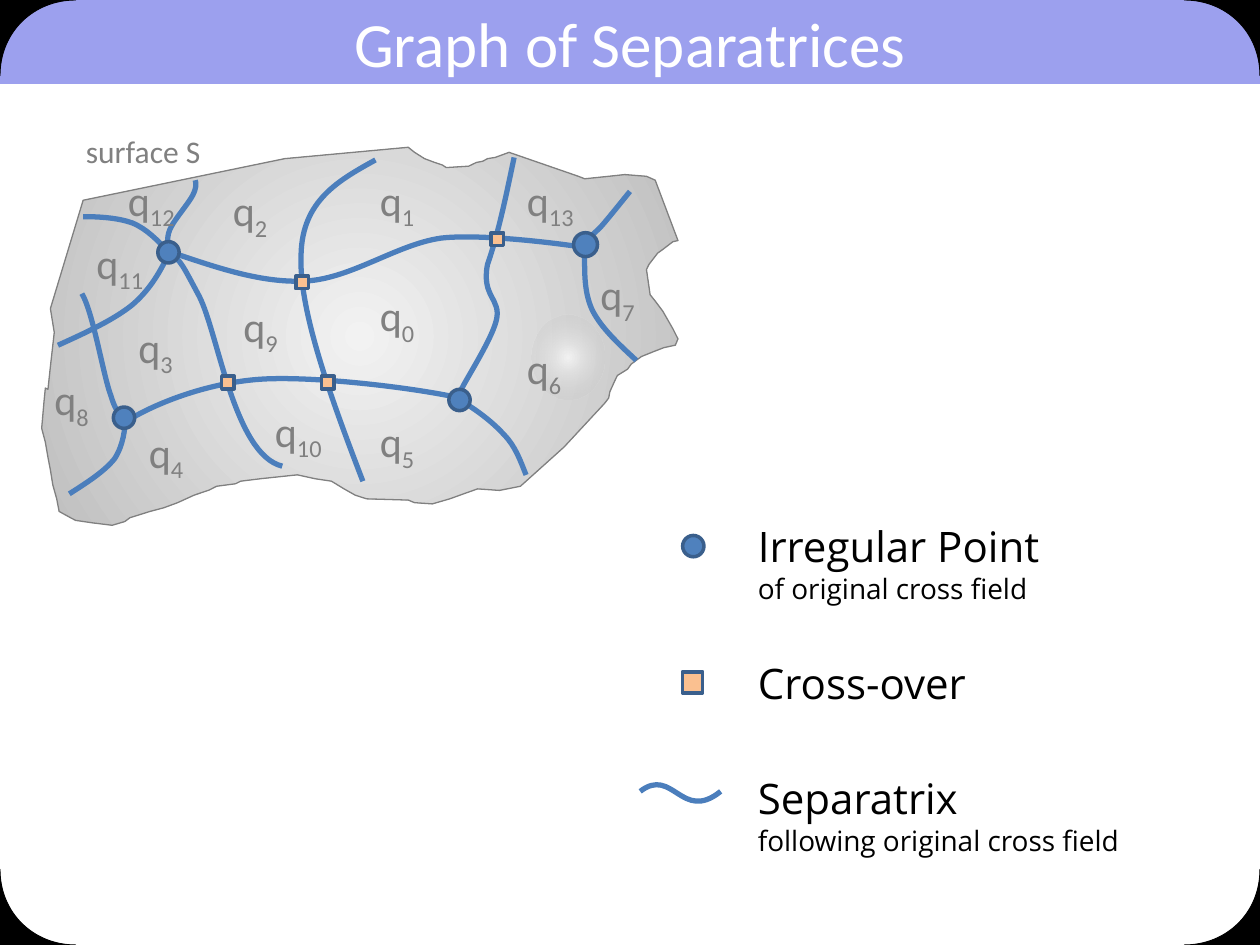
from lxml.etree import SubElement
from pptx import Presentation
from pptx.dml.color import RGBColor
from pptx.enum.shapes import MSO_SHAPE
from pptx.enum.text import MSO_ANCHOR, MSO_AUTO_SIZE, PP_ALIGN
from pptx.oxml.ns import qn
from pptx.util import Pt

WIDTH, HEIGHT = 720, 540
BAND = RGBColor(0x9C, 0xA0, 0xEE)
WHITE = RGBColor(0xFF, 0xFF, 0xFF)
BLACK = RGBColor(0, 0, 0)
GRAY = RGBColor(0x80, 0x80, 0x80)
SURFACE_LIGHT = RGBColor(0xF2, 0xF2, 0xF2)
SURFACE_DARK = RGBColor(0xBF, 0xBF, 0xBF)
CURVE = RGBColor(0x4B, 0x7E, 0xBC)
POINT = RGBColor(0x4F, 0x81, 0xBD)
CROSSOVER = RGBColor(0xFA, 0xC0, 0x90)
MARKER_EDGE = RGBColor(0x3A, 0x5F, 0x8C)

SURFACE = [
    (28.8, 209.5), (31, 190), (28.8, 176.4), (47.5, 114.5), (162.7, 90.7),
    (233.3, 84.2), (236.9, 87.1), (242.6, 90.7), (248.4, 92.9), (252.7, 94.3),
    (255, 95.8), (267.8, 95), (272.2, 92.9), (275.8, 92.2), (278.6, 90.7),
    (283, 90), (290.9, 87.1), (330.5, 100.8), (334.1, 102.2), (347.8, 100.8),
    (357, 99.8), (369.4, 100.8), (374.4, 103), (387.4, 137.5), (384.5, 138.2),
    (378.7, 142.6), (375.8, 144.7), (370.8, 151.2), (369.4, 154.1), (371.5, 168.5),
    (374.4, 172.1), (378.7, 177.8), (384.5, 187.9), (387.4, 193.7), (385.9, 197.3),
    (379.4, 198.7), (373.7, 200.9), (366.5, 203.8), (360.7, 208.1), (358.6, 211),
    (352.8, 214.6), (351.4, 217.4), (348.5, 223.9), (347.8, 227.5), (345.6, 230.4),
    (322.3, 255.5), (297.4, 277.9), (285.4, 280.3), (272.9, 279.4), (265, 282.2),
    (257, 285.1), (247, 288), (236.9, 287.3), (233.3, 285.8), (209.5, 285.1),
    (203, 283), (196.6, 279.4), (189.4, 275), (180, 273.6), (169.9, 271.4),
    (149, 273.6), (137.5, 275), (134.6, 276.5), (123.8, 277.9), (119.5, 280.1),
    (110.9, 283), (101.5, 287.3), (93.6, 290.2), (85.7, 292.3), (74.2, 295.9),
    (71.3, 298.1), (64.1, 300.2), (52.6, 298.8), (43.2, 297.4), (40.3, 295.9),
    (33.8, 292.3), (32.4, 285.1), (30.2, 277.2), (28.8, 268.6), (27.4, 261.4),
    (25.9, 252.7), (23.8, 244.8), (25.2, 229), (25.9, 221.8), (27.4, 222.5),
]

# Each separatrix: a start, then two control points and an end per cubic piece
SEPARATRICES = [
    [(96.5, 144), (95.8, 139.7), (95, 134.6), (97.9, 129.6), (100, 125.3),
     (108, 115.9), (110.2, 111.6), (112.3, 107.3), (112.3, 105.1), (111.6, 103)],
    [(97.2, 144), (104.4, 151.2), (103, 149), (113.8, 169.2),
     (124.6, 190.1), (133.9, 259.9), (161.3, 266.4)],
    [(72.7, 240.5), (86.4, 231.8), (116.6, 218.9), (149, 216.7),
     (181.4, 214.6), (243.4, 222.5), (265.7, 228.2)],
    [(97.2, 144), (123.1, 152.6), (149, 162), (175, 160.6), (200.9, 159.1),
     (226.8, 139.7), (252, 136.1), (277.2, 133.2), (326.9, 140.4), (326.9, 140.4)],
    [(96.5, 144), (90, 137.5), (84.2, 131), (75.6, 127.4),
     (67.7, 124.6), (57.6, 123.8), (47.5, 123.8)],
    [(97.2, 143.3), (92.2, 154.1), (86.4, 164.9), (75.6, 174.2),
     (64.8, 182.9), (49, 190.1), (33.1, 197.3)],
    [(69.8, 239.8), (70.6, 237.6), (67, 238.3), (63.4, 226.1),
     (59, 214.6), (53.3, 178.6), (46.8, 167.8)],
    [(214.6, 91.4), (193.7, 103), (172.8, 114.5), (172.1, 145.4),
     (170.6, 176.4), (188.6, 226.1), (207.4, 275)],
    [(262.8, 224.6), (263.5, 221), (280.8, 195.1), (283.7, 182.9), (286.6, 170.6),
     (275, 169.9), (278.6, 151.2), (285.1, 132.5), (289.4, 110.9), (293.8, 90)],
    [(72, 237.6), (71.3, 245.5), (70.6, 254.2), (65.5, 262.1),
     (59.8, 269.3), (49.7, 275.8), (39.6, 282.2)],
    [(263.5, 229), (272.9, 234.7), (281.5, 241.2), (288, 248.4),
     (294.5, 254.9), (297.4, 263.5), (300.6, 271.4)],
    [(335.5, 136.8), (337, 135.4), (339.1, 133.9), (343.4, 129.6),
     (347.8, 124.6), (353.5, 117.4), (360, 109.4)],
    [(334.1, 142.6), (334.1, 154.1), (333.4, 166.3), (338.4, 177.1),
     (343.4, 187.2), (353.5, 196.6), (363.6, 205.9)],
]
LEGEND_WAVE = [(365.8, 452.2), (384.5, 437.8), (389.5, 470.2), (411.8, 452.2)]

# Top-left corner piece; the other three are its reflections
CORNER = [(-1, -1.4), (-1, 13), (-1.4, 34.6), (0, 43.2), (0, 18), (19.4, 0),
          (43.2, 0), (33.8, -1.4), (13, -1.4), (-1, -1.4)]

IRREGULAR_POINTS = [(96.3, 144.2, 12.2), (70.9, 238.7, 12.2),
                    (262.6, 228.6, 12.2), (334.6, 139.8, 13.7)]
CROSSOVERS = [(130.3, 218.6), (172.7, 161.4), (187.4, 218.6), (284.3, 136.7)]

# Patch index -> left and top of its label
PATCH_LABELS = {
    0: (210, 162), 3: (72, 180), 9: (132, 168), 2: (126, 102), 11: (48, 132),
    8: (24, 210), 4: (78, 240), 10: (150, 228), 6: (294, 192), 5: (210, 234),
    1: (210, 96), 13: (294, 96), 7: (336, 150), 12: (66, 96),
}
LEGEND_TEXTS = [
    (294, 198, 55, ["Irregular Point", "of original cross field"]),
    (372, 192, 36, ["Cross-over"]),
    (438, 228, 55, ["Separatrix", "following original cross field"]),
]


class Painter:
    heading_font, legend_font = "Calibri", "Open Sans"

    def __init__(self, slide):
        self.slide = slide
        self.shapes = slide.shapes

    def start_group(self):
        self.shapes = self.slide.shapes.add_group_shape().shapes

    def end_group(self):
        self.shapes = self.slide.shapes

    def title(self, text, height):
        title = self.slide.shapes.title
        title.left, title.top, title.width, title.height = 0, 0, Pt(WIDTH), Pt(height)
        title.text_frame.vertical_anchor = MSO_ANCHOR.MIDDLE
        title.text_frame.text = text
        paragraph = title.text_frame.paragraphs[0]
        paragraph.alignment = PP_ALIGN.CENTER
        self.font(paragraph, self.heading_font, 36, WHITE)
        # Bring the title in front of the band and corners
        title._element.getparent().append(title._element)

    def font(self, paragraph, name, size, color):
        paragraph.font.name, paragraph.font.size = name, Pt(size)
        paragraph.font.color.rgb = color

    def paint(self, shape, fill, edge, weight):
        shape.shadow.inherit = False
        if fill is None:
            shape.fill.background()
        else:
            shape.fill.solid()
            shape.fill.fore_color.rgb = fill
        if edge is None:
            shape.line.fill.background()
        else:
            shape.line.color.rgb, shape.line.width = edge, Pt(weight)
        return shape

    def outline(self, points, fill=None, edge=None, weight=1, close=True):
        start, *rest = [(Pt(x), Pt(y)) for x, y in points]
        builder = self.shapes.build_freeform(*start)
        builder.add_line_segments(rest, close=close)
        return self.paint(builder.convert_to_shape(), fill, edge, weight)

    def curve(self, knots, fill=None, edge=CURVE, weight=3, close=False):
        shape = self.outline(knots, fill, edge, weight, close)
        # Join each three line steps into one cubic piece
        lines = list(shape._element.iter(qn("a:lnTo")))
        for i in range(0, len(lines), 3):
            cubic = lines[i].makeelement(qn("a:cubicBezTo"))
            lines[i].addprevious(cubic)
            for line in lines[i:i + 3]:
                cubic.append(line[0])
                line.getparent().remove(line)

    def marker(self, kind, x, y, width, height, fill, edge=MARKER_EDGE):
        shape = self.shapes.add_shape(kind, Pt(x - width / 2), Pt(y - height / 2),
                                      Pt(width), Pt(height))
        return self.paint(shape, fill, edge, 2)

    def radial_gradient(self, shape, fade=False):
        shape.fill.gradient()
        for stop, color in zip(shape.fill.gradient_stops, (SURFACE_LIGHT, SURFACE_DARK)):
            stop.color.rgb = color
        gradient = shape._element.spPr.find(qn("a:gradFill"))
        gradient.remove(gradient.find(qn("a:lin")))
        circle = SubElement(gradient, qn("a:path"), path="circle")
        SubElement(circle, qn("a:fillToRect"), dict.fromkeys("ltrb", "50000"))
        if fade:
            last_color = gradient.findall(".//" + qn("a:srgbClr"))[-1]
            SubElement(last_color, qn("a:alpha"), val="0")

    def text_frame(self, x, y, width, height, wrap):
        frame = self.shapes.add_textbox(Pt(x), Pt(y), Pt(width), Pt(height)).text_frame
        frame.word_wrap = wrap
        frame.auto_size = MSO_AUTO_SIZE.SHAPE_TO_FIT_TEXT
        return frame

    def label(self, x, y, width, height, text, size, subscript=None):
        paragraph = self.text_frame(x, y, width, height, False).paragraphs[0]
        paragraph.add_run().text = text
        if subscript is not None:
            index = paragraph.add_run()
            index.text = subscript
            index._r.get_or_add_rPr().set("baseline", "-25000")
        self.font(paragraph, self.heading_font, size, GRAY)

    def legend_text(self, y, width, height, lines):
        frame = self.text_frame(426, y, width, height, True)
        frame.text = "\n".join(lines)
        for paragraph, size in zip(frame.paragraphs, (24, 16)):
            self.font(paragraph, self.legend_font, size, BLACK)


def main():
    prs = Presentation()
    prs.slide_width, prs.slide_height = Pt(WIDTH), Pt(HEIGHT)
    painter = Painter(prs.slides.add_slide(prs.slide_layouts[5]))

    # Title band and rounded black corners
    painter.marker(MSO_SHAPE.RECTANGLE, WIDTH / 2, 24, WIDTH, 48, BAND, None)
    for right, bottom in ((0, 0), (0, 1), (1, 1), (1, 0)):
        piece = [(WIDTH - x if right else x, HEIGHT - y if bottom else y) for x, y in CORNER]
        painter.curve(piece, BLACK, BLACK, 0.5, close=True)
    painter.title("Graph of Separatrices", 48)

    # Surface with separatrices and their nodes
    painter.start_group()
    painter.radial_gradient(painter.outline(SURFACE, WHITE, GRAY, 0.75))
    for knots in SEPARATRICES:
        painter.curve(knots)
    for x, y, size in IRREGULAR_POINTS:
        painter.marker(MSO_SHAPE.OVAL, x, y, size, size, POINT)
    for x, y in CROSSOVERS:
        painter.marker(MSO_SHAPE.RECTANGLE, x, y, 7.2, 7.2, CROSSOVER)
    highlight = painter.marker(MSO_SHAPE.OVAL, 324.7, 204.1, 41.8, 48.2, WHITE, None)
    painter.radial_gradient(highlight, fade=True)
    painter.end_group()

    # Legend
    painter.marker(MSO_SHAPE.OVAL, 396.2, 312.1, 12.2, 12.2, POINT)
    painter.marker(MSO_SHAPE.RECTANGLE, 395.8, 390, 11.5, 12.2, CROSSOVER)
    painter.curve(LEGEND_WAVE)
    for entry in LEGEND_TEXTS:
        painter.legend_text(*entry)

    # Surface and patch labels
    painter.label(42, 72, 80.6, 28.8, "surface S", 18)
    painter.start_group()
    for patch, (x, y) in PATCH_LABELS.items():
        painter.label(x, y, 35.3 if patch < 10 else 43.9, 36, "q", 24, str(patch))

    prs.save("out.pptx")


if __name__ == "__main__":
    main()
